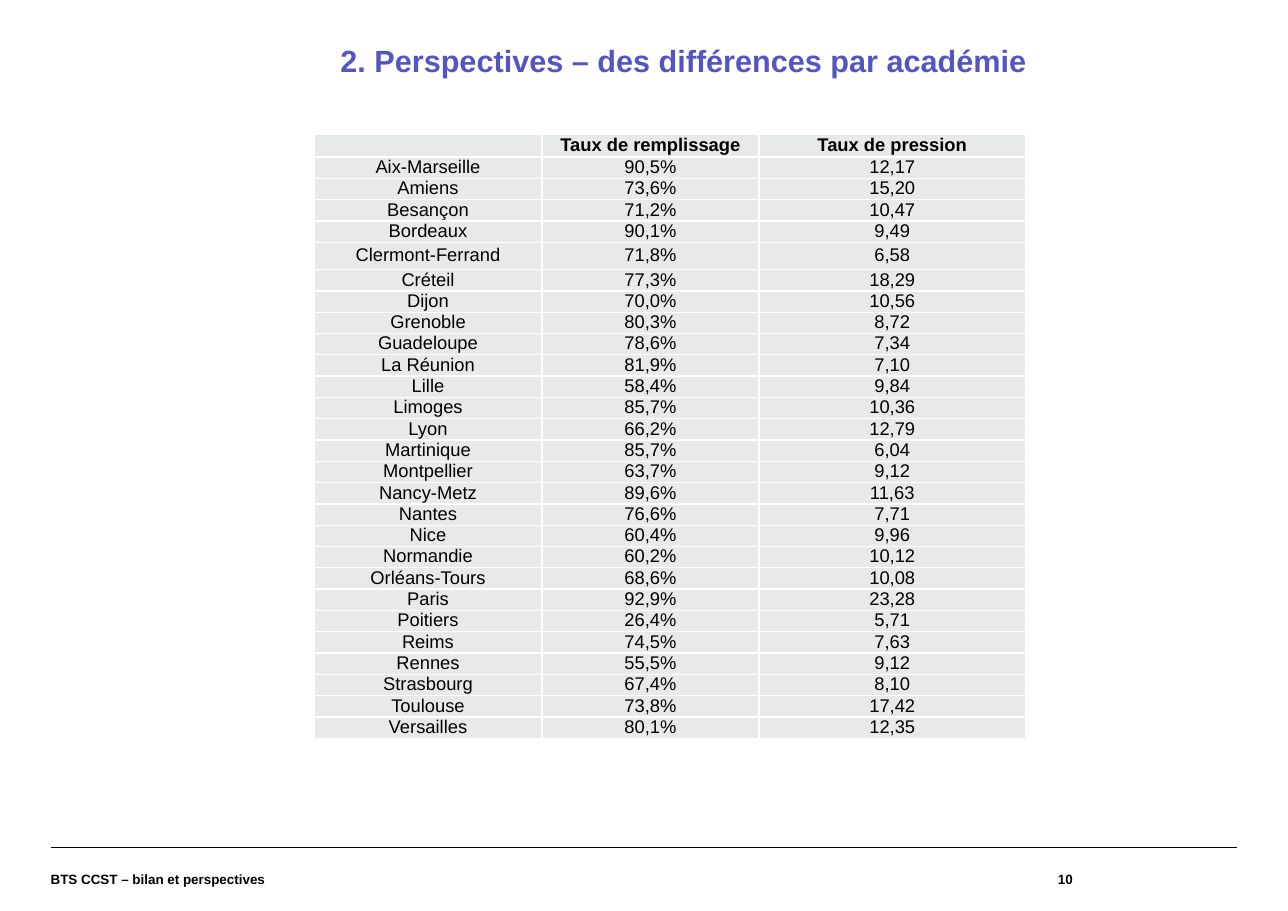
from lxml.etree import SubElement
from pptx import Presentation
from pptx.dml.color import RGBColor
from pptx.enum.shapes import MSO_CONNECTOR
from pptx.enum.text import MSO_ANCHOR, PP_ALIGN
from pptx.oxml.ns import qn
from pptx.util import Cm, Pt

BLACK = RGBColor(0x00, 0x00, 0x00)
WHITE = RGBColor(0xFF, 0xFF, 0xFF)
VIOLET = RGBColor(0x55, 0x55, 0xC1)
GREY = RGBColor(0xE7, 0xEA, 0xE9)

HEADINGS = ("", "Taux de remplissage", "Taux de pression")
RATES = [
    ("Aix-Marseille", "90,5%", "12,17"),
    ("Amiens", "73,6%", "15,20"),
    ("Besançon", "71,2%", "10,47"),
    ("Bordeaux", "90,1%", "9,49"),
    ("Clermont-Ferrand", "71,8%", "6,58"),
    ("Créteil", "77,3%", "18,29"),
    ("Dijon", "70,0%", "10,56"),
    ("Grenoble", "80,3%", "8,72"),
    ("Guadeloupe", "78,6%", "7,34"),
    ("La Réunion", "81,9%", "7,10"),
    ("Lille", "58,4%", "9,84"),
    ("Limoges", "85,7%", "10,36"),
    ("Lyon", "66,2%", "12,79"),
    ("Martinique", "85,7%", "6,04"),
    ("Montpellier", "63,7%", "9,12"),
    ("Nancy-Metz", "89,6%", "11,63"),
    ("Nantes", "76,6%", "7,71"),
    ("Nice", "60,4%", "9,96"),
    ("Normandie", "60,2%", "10,12"),
    ("Orléans-Tours", "68,6%", "10,08"),
    ("Paris", "92,9%", "23,28"),
    ("Poitiers", "26,4%", "5,71"),
    ("Reims", "74,5%", "7,63"),
    ("Rennes", "55,5%", "9,12"),
    ("Strasbourg", "67,4%", "8,10"),
    ("Toulouse", "73,8%", "17,42"),
    ("Versailles", "80,1%", "12,35"),
]
COLUMN_WIDTHS = (5.26, 5, 6.15)
TABLE_HEIGHT = 13.94
SPECIAL_HEIGHTS = {"": 0.52, "Clermont-Ferrand": 0.63}


class SlideBuilder:
    font_name = "Arial"
    table_size = 12
    table_spacing = 0.94

    def __init__(self, page):
        self.page = page

    def style(self, para, size, color=BLACK, bold=False, align=PP_ALIGN.LEFT):
        para.alignment = align
        para.font.name = self.font_name
        para.font.size = Pt(size)
        para.font.bold = bold
        para.font.color.rgb = color

    def text(self, words, left, top, width, height, size, color=BLACK,
             align=PP_ALIGN.LEFT, anchor=MSO_ANCHOR.MIDDLE, spacing=1.0):
        box = self.page.shapes.add_textbox(Cm(left), Cm(top), Cm(width), Cm(height))
        frame = box.text_frame
        frame.word_wrap = True
        frame.vertical_anchor = anchor
        frame.margin_left = frame.margin_right = 0
        frame.margin_top = frame.margin_bottom = 0
        para = frame.paragraphs[0]
        para.text = words
        para.line_spacing = spacing
        self.style(para, size, color, True, align)

    def rule(self, left, right, top):
        line = self.page.shapes.add_connector(
            MSO_CONNECTOR.STRAIGHT, Cm(left), Cm(top), Cm(right), Cm(top))
        line.line.color.rgb = BLACK
        line.line.width = Pt(0.8)
        SubElement(line._element.spPr, qn("a:effectLst"))

    def table(self, rows, left, top):
        plain_count = len(rows) - len(SPECIAL_HEIGHTS)
        plain_height = (TABLE_HEIGHT - sum(SPECIAL_HEIGHTS.values())) / plain_count
        frame = self.page.shapes.add_table(
            len(rows), len(COLUMN_WIDTHS), Cm(left), Cm(top),
            Cm(sum(COLUMN_WIDTHS)), Cm(TABLE_HEIGHT))
        grid = frame.table
        grid.horz_banding = False
        for column, width in zip(grid.columns, COLUMN_WIDTHS):
            column.width = Cm(width)
        for row, values in zip(grid.rows, rows):
            row.height = Cm(SPECIAL_HEIGHTS.get(values[0], plain_height))
            for cell, value in zip(row.cells, values):
                self.cell(cell, value, bold=values is HEADINGS)

    def cell(self, cell, value, bold):
        cell.margin_left = cell.margin_right = Cm(0.02)
        cell.margin_top = cell.margin_bottom = 0
        cell.vertical_anchor = MSO_ANCHOR.MIDDLE
        self.borders(cell)
        cell.fill.solid()
        cell.fill.fore_color.rgb = GREY
        para = cell.text_frame.paragraphs[0]
        para.text = value
        para.line_spacing = self.table_spacing
        self.style(para, self.table_size, bold=bold, align=PP_ALIGN.CENTER)
        if not value:
            SubElement(para._p, qn("a:endParaRPr"), sz=str(self.table_size * 100))

    def borders(self, cell):
        properties = cell._tc.get_or_add_tcPr()
        for side in ("lnL", "lnR", "lnT", "lnB"):
            line = SubElement(properties, qn(f"a:{side}"), w=str(Pt(1)))
            fill = SubElement(line, qn("a:solidFill"))
            SubElement(fill, qn("a:srgbClr"), val=str(WHITE))


def main():
    deck = Presentation()
    deck.slide_width = Cm(29.7)
    deck.slide_height = Cm(21)
    builder = SlideBuilder(deck.slides.add_slide(deck.slide_layouts[6]))
    builder.rule(1.17, 28.52, 19.53)
    builder.text("BTS CCST – bilan et perspectives", 1.17, 19.53, 19.18, 1.47, 8.8)
    builder.text("10", 20.35, 19.53, 4.39, 1.47, 8.8, align=PP_ALIGN.RIGHT)
    builder.text("2. Perspectives – des différences par académie",
                 7.85, 1.07, 21.5, 1.8, 20, VIOLET,
                 anchor=MSO_ANCHOR.TOP, spacing=0.9)
    builder.table([HEADINGS, *RATES], 7.24, 3.1)
    deck.save("out.pptx")


if __name__ == "__main__":
    main()
